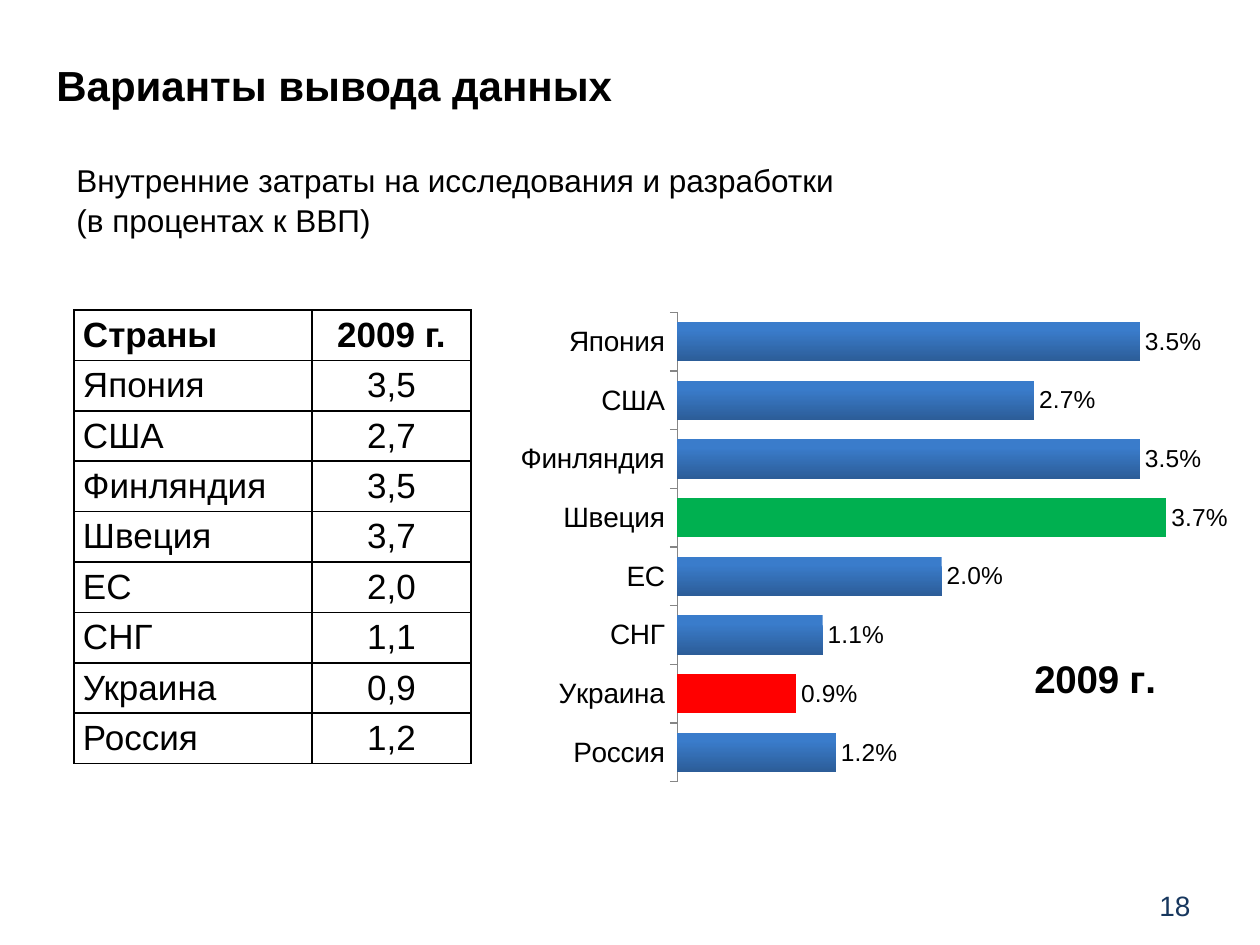
from lxml.etree import SubElement
from pptx import Presentation
from pptx.chart.data import CategoryChartData
from pptx.dml.color import RGBColor
from pptx.enum.chart import XL_CHART_TYPE, XL_LABEL_POSITION, XL_TICK_MARK
from pptx.enum.text import MSO_ANCHOR, PP_ALIGN
from pptx.oxml import parse_xml
from pptx.oxml.ns import nsdecls, qn
from pptx.util import Pt

PX = 914400 / 126
COUNTRIES = [
    ("Япония", 3.5), ("США", 2.7), ("Финляндия", 3.5), ("Швеция", 3.7),
    ("ЕС", 2.0), ("СНГ", 1.1), ("Украина", 0.9), ("Россия", 1.2),
]
YEAR = "2009 г."
HIGHLIGHTS = {"Украина": "FF0000", "Швеция": "00B050"}


def px(*lengths):
    return [round(length * PX) for length in lengths]


def set_font(font, size, color="000000", bold=False):
    font.name = "Arial"
    font.size = Pt(size)
    font.bold = bold
    font.color.rgb = RGBColor.from_string(color)


presentation = Presentation()
presentation.slide_width, presentation.slide_height = px(1260, 945)
slide = presentation.slides.add_slide(presentation.slide_layouts[6])

texts = [
    ((1145, 882, 60, 47), ["18"], 16, "17375E", False, MSO_ANCHOR.MIDDLE, PP_ALIGN.CENTER, False),
    ((44, 16, 1022, 100), ["Варианты вывода данных"], 24, "000000", True,
     MSO_ANCHOR.BOTTOM, PP_ALIGN.LEFT, True),
    ((64, 155, 983, 89), ["Внутренние затраты на исследования и разработки", "(в процентах к ВВП)"],
     18, "000000", False, MSO_ANCHOR.TOP, PP_ALIGN.LEFT, True),
]
for box, lines, size, color, bold, anchor, alignment, wrap in texts:
    frame = slide.shapes.add_textbox(*px(*box)).text_frame
    frame.word_wrap = wrap
    frame.vertical_anchor = anchor
    frame.text = "\n".join(lines)
    for index, paragraph in enumerate(frame.paragraphs):
        paragraph.alignment = alignment
        set_font(paragraph.font, size, color, bold)
        if index:
            paragraph.space_before = Pt(1)

rows = [("Страны", YEAR)]
rows += [(country, f"{value:.1f}".replace(".", ",")) for country, value in COUNTRIES]
table = slide.shapes.add_table(len(rows), 2, *px(74, 310, 397, 454)).table
table.first_row = table.horz_banding = False
for column, width in zip(table.columns, px(238, 159)):
    column.width = width
for row_index, row in enumerate(rows):
    for column_index, text in enumerate(row):
        cell = table.cell(row_index, column_index)
        cell.text = text
        cell.vertical_anchor = MSO_ANCHOR.MIDDLE
        cell.margin_left, cell.margin_right = px(9, 9)
        cell.margin_top = cell.margin_bottom = 0
        paragraph = cell.text_frame.paragraphs[0]
        paragraph.alignment = PP_ALIGN.CENTER if column_index else PP_ALIGN.LEFT
        set_font(paragraph.font, 20, bold=row_index == 0)
        properties = cell._tc.get_or_add_tcPr()
        for side in ("lnL", "lnR", "lnT", "lnB"):
            line = SubElement(properties, qn(f"a:{side}"), w=str(Pt(1)))
            SubElement(SubElement(line, qn("a:solidFill")), qn("a:srgbClr"), val="000000")
        cell.fill.background()

bars = COUNTRIES[::-1]
chart_data = CategoryChartData(number_format="0.0%")
chart_data.categories = [country for country, value in bars]
chart_data.add_series(YEAR, [round(value / 100, 3) for country, value in bars])
chart = slide.shapes.add_chart(
    XL_CHART_TYPE.BAR_CLUSTERED, *px(491, 290, 745, 559), chart_data
).chart
set_font(chart.font, 18)
chart.has_legend = False

chart.has_title = True
chart.chart_title.text_frame.text = YEAR
set_font(chart.chart_title.text_frame.paragraphs[0].font, 22, bold=True)
chart.chart_title.include_in_layout = True

category_axis = chart.category_axis
category_axis.major_tick_mark = XL_TICK_MARK.OUTSIDE
category_axis.format.line.color.rgb = RGBColor.from_string("868686")
set_font(category_axis.tick_labels.font, 16)
value_axis = chart.value_axis
value_axis.minimum_scale, value_axis.maximum_scale = 0, 0.04
value_axis.has_major_gridlines = False
value_axis.visible = False

plot = chart.plots[0]
plot.gap_width = 50
plot.vary_by_categories = False
series = plot.series[0]
fill = series.format.fill
fill.gradient()
fill.gradient_angle = 270
for stop, color, position in zip(fill.gradient_stops, ("3A7CCB", "2C5D98"), (0.2, 1)):
    stop.color.rgb = RGBColor.from_string(color)
    stop.position = position
for index, (country, value) in enumerate(bars):
    if country in HIGHLIGHTS:
        point_fill = series.points[index].format.fill
        point_fill.solid()
        point_fill.fore_color.rgb = RGBColor.from_string(HIGHLIGHTS[country])

labels = series.data_labels
labels.show_value = True
labels.number_format = "0.0%"
labels.number_format_is_linked = False
labels.position = XL_LABEL_POSITION.OUTSIDE_END
set_font(labels.font, 14)

title_layout = {"xMode": "edge", "yMode": "edge", "x": 0.72, "y": 0.64}
plot_layout = {"layoutTarget": "inner", "xMode": "edge", "yMode": "edge",
               "x": 0.25, "y": 0.04, "w": 0.71, "h": 0.84}
title_element = chart.chart_title._element
plot_element = chart._chartSpace.chart.plotArea
for element, layout, place in ((title_element, title_layout, 1), (plot_element, plot_layout, 0)):
    for old_layout in element.findall(qn("c:layout")):
        element.remove(old_layout)
    settings = "".join(f'<c:{key} val="{value}"/>' for key, value in layout.items())
    element.insert(place, parse_xml(
        f'<c:layout {nsdecls("c")}><c:manualLayout>{settings}</c:manualLayout></c:layout>'
    ))

presentation.save("out.pptx")
